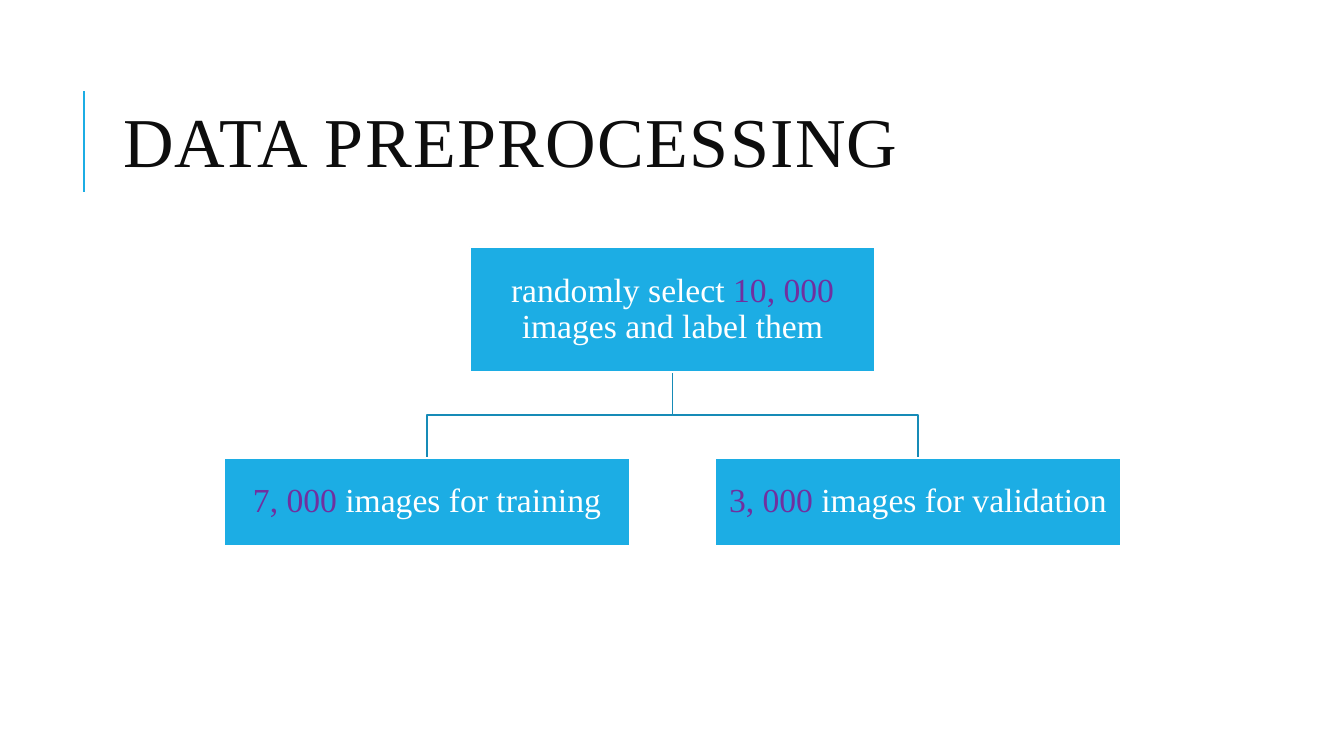
from lxml import etree
from pptx import Presentation
from pptx.dml.color import RGBColor
from pptx.enum.shapes import MSO_CONNECTOR, MSO_SHAPE
from pptx.enum.text import MSO_ANCHOR, MSO_AUTO_SIZE, PP_ALIGN
from pptx.oxml.ns import qn
from pptx.util import Inches, Pt

BLUE = RGBColor(0x1C, 0xAD, 0xE4)
BRANCH_BLUE = RGBColor(0x16, 0x8B, 0xB7)
PURPLE = RGBColor(0x70, 0x30, 0xA0)
WHITE = RGBColor(0xFF, 0xFF, 0xFF)
INK = RGBColor(0x0D, 0x0D, 0x0D)
FONT = "Times New Roman"

BOX_W, GAP = 4.02, 0.85
ROOT_TOP, ROOT_H = 2.45, 1.24
LEAF_TOP, LEAF_H = 4.54, 0.88
CENTER = 6.67
STEP = (BOX_W + GAP) / 2
ROOT_BOTTOM = ROOT_TOP + ROOT_H
FORK = (ROOT_BOTTOM + LEAF_TOP) / 2


def add_run(p, text, size, color):
    r = p.add_run()
    r.text = text
    for name, value in {"name": FONT, "size": Pt(size)}.items():
        setattr(r.font, name, value)
    r.font.color.rgb = color
    return r


prs = Presentation()
prs.slide_width, prs.slide_height = Inches(13.33), Inches(7.5)
s = prs.slides.add_slide(prs.slide_layouts[5])

rule = s.shapes.add_connector(
    MSO_CONNECTOR.STRAIGHT, Inches(0.83), Inches(1.9), Inches(0.83), Inches(0.9))
rule.line.color.rgb = BLUE
rule.line.width = Pt(1.5)
etree.SubElement(rule._element.spPr, qn("a:effectLst"))

title = s.shapes.title
for name, value in {"left": 1.12, "top": 0.64, "width": 10.63, "height": 1.64}.items():
    setattr(title, name, Inches(value))
tf = title.text_frame
for name, value in {"vertical_anchor": MSO_ANCHOR.MIDDLE, "word_wrap": True,
                    "auto_size": MSO_AUTO_SIZE.NONE}.items():
    setattr(tf, name, value)
p = tf.paragraphs[0]
p.alignment = PP_ALIGN.LEFT
p.line_spacing = 0.8
r = add_run(p, "DATA PREPROCESSING", 50, INK)
r.font._element.set("spc", "100")

for side in (1, -1):
    leaf_x = CENTER + side * STEP
    fb = s.shapes.build_freeform(Inches(CENTER), Inches(ROOT_BOTTOM))
    fb.add_line_segments(
        [(Inches(x), Inches(y)) for x, y in
         ((CENTER, FORK), (leaf_x, FORK), (leaf_x, LEAF_TOP))], close=False)
    branch = fb.convert_to_shape()
    branch.shadow.inherit = False
    branch.fill.background()
    branch.line.color.rgb = BRANCH_BLUE
    branch.line.width = Pt(1.25)

boxes = [
    (0, ROOT_TOP, ROOT_H, [("randomly select ", WHITE), ("10, 000 ", PURPLE),
                           ("images and label them", WHITE)]),
    (-1, LEAF_TOP, LEAF_H, [("7, 000 ", PURPLE), ("images for training", WHITE)]),
    (1, LEAF_TOP, LEAF_H, [("3, 000 ", PURPLE), ("images for validation", WHITE)]),
]
for column, top, height, runs in boxes:
    left = CENTER + column * STEP - BOX_W / 2
    sp = s.shapes.add_shape(MSO_SHAPE.RECTANGLE, Inches(left), Inches(top),
                            Inches(BOX_W), Inches(height))
    sp.shadow.inherit = False
    sp.fill.solid()
    sp.fill.fore_color.rgb = BLUE
    sp.line.color.rgb = WHITE
    sp.line.width = Pt(1.25)
    tf = sp.text_frame
    tf.word_wrap = True
    tf.vertical_anchor = MSO_ANCHOR.MIDDLE
    for edge in ("left", "top", "right", "bottom"):
        setattr(tf, f"margin_{edge}", Inches(0.02))
    p = tf.paragraphs[0]
    p.alignment = PP_ALIGN.CENTER
    p.line_spacing = 0.9
    for text, color in runs:
        add_run(p, text, 24, color)

prs.save("out.pptx")
